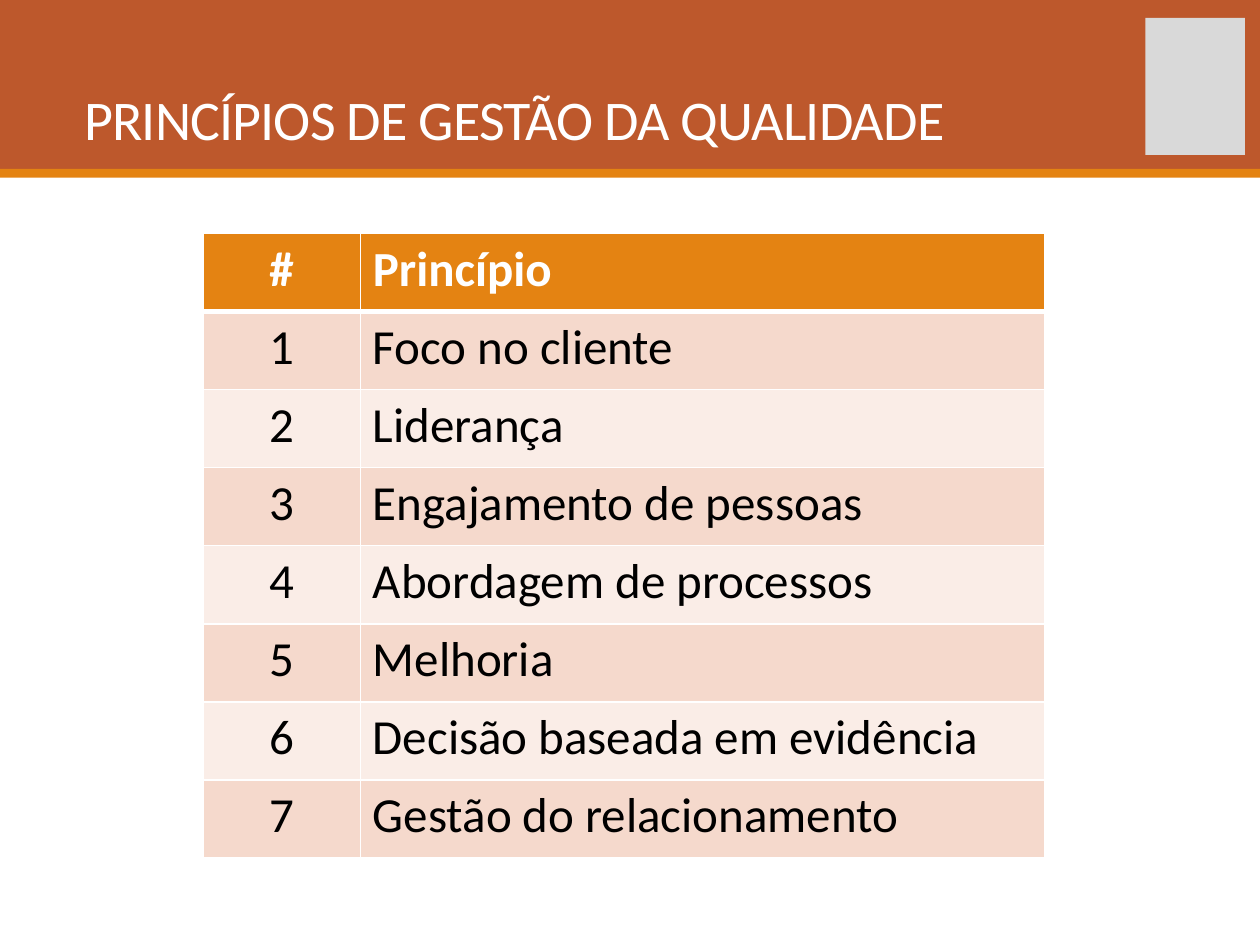
import pptx
import pptx.util
import pptx.dml.color
import pptx.enum.shapes
import pptx.enum.text
import pptx.oxml.ns
from lxml import etree

RGBColor = pptx.dml.color.RGBColor
RUST = RGBColor(0xBD, 0x58, 0x2C)
ORANGE = RGBColor(0xE4, 0x83, 0x12)
GREY = RGBColor(0xD9, 0xD9, 0xD9)
WHITE = RGBColor(0xFF, 0xFF, 0xFF)
BLACK = RGBColor(0, 0, 0)
BANDS = (RGBColor(0xF5, 0xD9, 0xCC), RGBColor(0xFA, 0xED, 0xE7))

FONT = "Calibri"
WIDTH, HEIGHT = pptx.util.Inches(10), pptx.util.Inches(7.5)
HEADER_H = pptx.util.Inches(1.34)
STRIPE_H = pptx.util.Inches(0.07)
COLUMNS = (pptx.util.Inches(1.25), pptx.util.Inches(5.43))
ROW_H = pptx.util.Inches(0.62)

PRINCIPLES = (
    "Foco no cliente",
    "Liderança",
    "Engajamento de pessoas",
    "Abordagem de processos",
    "Melhoria",
    "Decisão baseada em evidência",
    "Gestão do relacionamento",
)


def across(share):
    return int(WIDTH * share)


def down(share):
    return int(HEIGHT * share)


def add_block(s, left, top, width, height, color):
    sp = s.shapes.add_shape(
        pptx.enum.shapes.MSO_SHAPE.RECTANGLE, left, top, width, height)
    sp.shadow.inherit = False
    sp.fill.solid()
    sp.fill.fore_color.rgb = color
    sp.line.fill.background()


def set_font(p, size, color, bold=False):
    p.font.name = FONT
    p.font.size = pptx.util.Pt(size)
    p.font.color.rgb = color
    p.font.bold = bold


def add_title(s, text):
    tf = s.shapes.add_textbox(
        across(0.057), down(0.044), across(0.851), down(0.117)).text_frame
    tf.word_wrap = True
    tf.vertical_anchor = pptx.enum.text.MSO_ANCHOR.BOTTOM
    tf.margin_top = tf.margin_bottom = 0
    p = tf.paragraphs[0]
    p.line_spacing = 0.85
    r = p.add_run()
    r.text = text
    r.font._element.set("spc", "-50")
    set_font(p, 32, WHITE)


def set_borders(cell, top, bottom):
    tcPr = cell._tc.get_or_add_tcPr()
    qn = pptx.oxml.ns.qn
    for side, points in (("L", 1), ("R", 1), ("T", top), ("B", bottom)):
        ln = etree.SubElement(tcPr, qn("a:ln" + side), w=str(pptx.util.Pt(points)))
        fill = etree.SubElement(ln, qn("a:solidFill"))
        etree.SubElement(fill, qn("a:srgbClr"), val=str(WHITE))


def add_principles_table(s):
    rows = [("#", "Princípio")]
    rows += [(str(n), name) for n, name in enumerate(PRINCIPLES, 1)]
    table = s.shapes.add_table(
        len(rows), len(COLUMNS), across(0.161), down(0.247),
        sum(COLUMNS), ROW_H * len(rows)).table
    for column, width in zip(table.columns, COLUMNS):
        column.width = width
    for i, row in enumerate(rows):
        header = i == 0
        table.rows[i].height = ROW_H
        for j, text in enumerate(row):
            cell = table.cell(i, j)
            # A thicker rule parts the header from the body
            set_borders(cell, top=3 if i == 1 else 1, bottom=3 if header else 1)
            cell.fill.solid()
            cell.fill.fore_color.rgb = ORANGE if header else BANDS[(i - 1) % 2]
            cell.text = text
            p = cell.text_frame.paragraphs[0]
            if j == 0:
                p.alignment = pptx.enum.text.PP_ALIGN.CENTER
            set_font(p, 28, WHITE if header else BLACK, bold=header)


def main():
    prs = pptx.Presentation()
    prs.slide_width, prs.slide_height = WIDTH, HEIGHT
    s = prs.slides.add_slide(prs.slide_layouts[6])

    # Header band, stripe and logo space
    add_block(s, 0, 0, WIDTH, HEADER_H, RUST)
    add_block(s, 0, HEADER_H, WIDTH, STRIPE_H, ORANGE)
    add_block(s, across(0.909), down(0.019), across(0.079), down(0.145), GREY)

    # Content
    add_principles_table(s)
    add_title(s, "PRINCÍPIOS DE GESTÃO DA QUALIDADE")

    prs.save("out.pptx")


if __name__ == "__main__":
    main()
